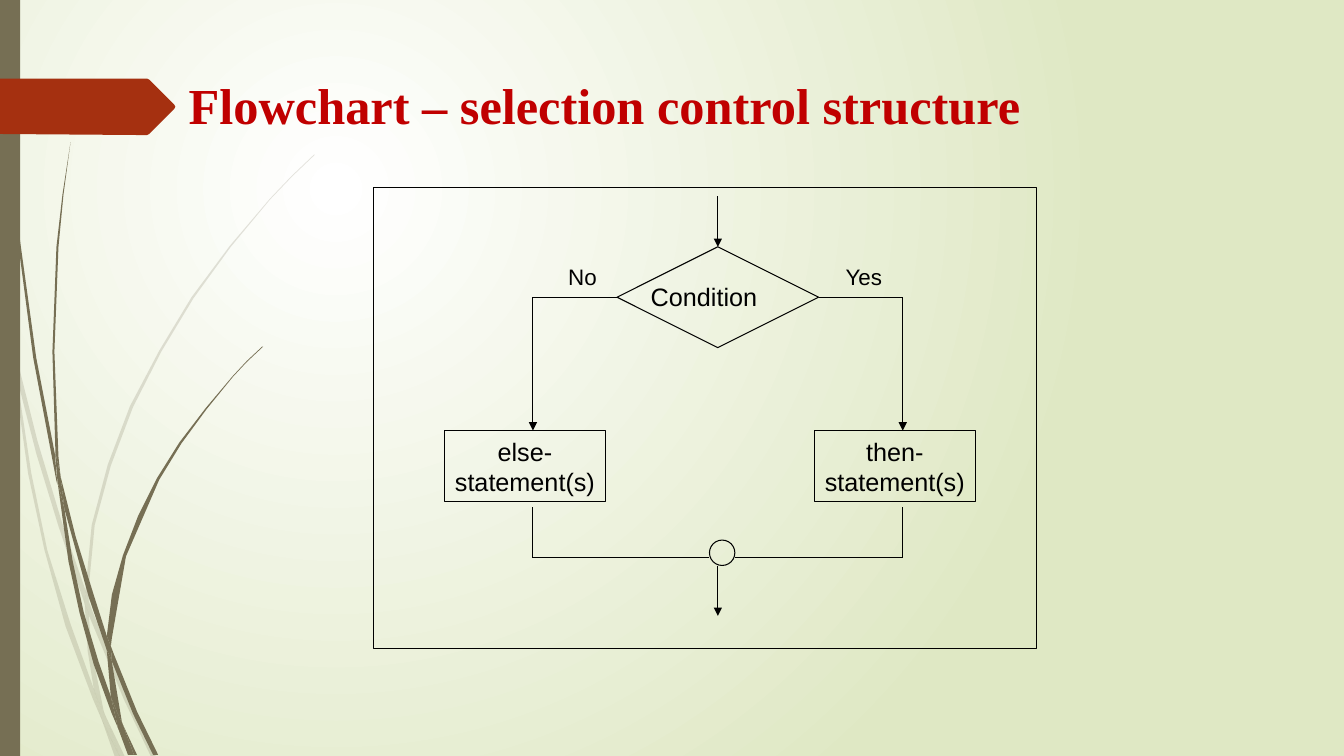
"""Build a slide with a flowchart of the selection control structure."""
from lxml.etree import SubElement
from pptx import Presentation
from pptx.dml.color import RGBColor
from pptx.enum.shapes import MSO_CONNECTOR, MSO_SHAPE
from pptx.enum.text import MSO_ANCHOR, MSO_AUTO_SIZE, PP_ALIGN
from pptx.oxml.ns import qn
from pptx.util import Cm, Pt

TITLE = "Flowchart – selection control structure"
BLACK, OLIVE, RUST, RED = "000000", "766F54", "A53010", "C00000"
BACKGROUND = [("FFFFFF", 0), ("DFE8C4", 100)]
HUNDREDTH = Cm(0.0254)

PALE_GRASS = [
    [(11, 350), (9, 322), (0, 282), (0, 299), (10, 344)],
    [(58, 522), (84, 599), (85, 586), (62, 520), (37, 437), (14, 345), (17, 376), (36, 450)],
    [(92, 607), (88, 596), (88, 610), (123, 694), (150, 751), (155, 751), (127, 692)],
    [(119, 751), (124, 751), (105, 711)],
    [(93, 683), (70, 619), (47, 546), (31, 469), (17, 376), (11, 350), (28, 470), (44, 545),
     (65, 621), (92, 693), (101, 714), (99, 707)],
    [(84, 599), (87, 646), (93, 683), (96, 692), (105, 711), (103, 706), (91, 646), (88, 610), (88, 608)],
    [(88, 584), (94, 521), (110, 462), (132, 404), (160, 349), (192, 296), (229, 245), (268, 198),
     (290, 175), (312, 154), (312, 153), (289, 175), (268, 197), (228, 244), (190, 295), (158, 348),
     (129, 403), (107, 461), (91, 521), (85, 584), (85, 586), (88, 596)],
    [(101, 714), (114, 751), (119, 751)],
    [(88, 608), (88, 610), (88, 596), (85, 586), (84, 599)],
    [(96, 692), (93, 683), (99, 707), (101, 714), (119, 751), (105, 711)],
]
DARK_GRASS = [
    [(7, 110), (17, 233), (33, 355), (56, 477), (57, 481), (55, 457), (55, 453), (36, 355), (19, 232),
     (8, 109), (5, 48), (4, 0), (3, 0), (4, 48)],
    [(88, 592), (106, 645), (106, 633), (106, 631), (93, 590), (75, 532), (60, 472), (64, 505)],
    [(113, 649), (110, 641), (111, 656), (132, 708), (152, 749), (157, 749), (136, 706)],
    [(110, 691), (98, 657), (83, 607), (72, 556), (64, 505), (57, 477), (68, 557), (79, 608), (93, 659),
     (111, 708), (117, 722), (116, 717)],
    [(60, 472), (58, 453), (54, 349), (58, 245), (63, 193), (70, 141), (62, 193), (56, 245), (52, 349),
     (55, 449), (60, 472)],
    [(133, 749), (136, 749), (122, 719)],
    [(57, 477), (64, 505), (60, 472), (55, 449), (55, 453)],
    [(111, 633), (125, 552), (158, 476), (180, 440), (205, 406), (231, 374), (245, 359), (261, 344),
     (260, 344), (245, 358), (231, 373), (204, 405), (178, 439), (156, 474), (137, 512), (122, 551),
     (111, 590), (106, 631), (110, 641)],
    [(117, 722), (127, 749), (131, 749)],
    [(106, 645), (110, 691), (116, 706), (122, 719), (121, 716), (111, 656), (109, 651)],
    [(106, 645), (109, 651), (111, 656), (110, 641), (106, 631), (106, 633)],
    [(116, 706), (110, 691), (116, 717), (117, 722), (130, 749), (133, 749), (122, 719)],
]
TITLE_ARROW = [(0, 78), (146, 78), (148, 79), (173, 104), (174, 106), (173, 108), (148, 133),
               (146, 134), (136, 134), (0, 133)]

CENTRE, BRANCH = 18.09, 4.66
NO_X, YES_X = CENTRE - BRANCH, CENTRE + BRANCH
DIAMOND_WIDTH, DIAMOND_HEIGHT, DIAMOND_TOP = 5.08, 2.54, 6.22
DIAMOND_LEFT = CENTRE - DIAMOND_WIDTH / 2
CONDITION_Y = DIAMOND_TOP + DIAMOND_HEIGHT / 2
BOX_WIDTH, BOX_HEIGHT, BOX_TOP, BOX_SHIFT = 4.06, 1.8, 10.85, 0.2
JOIN_Y, STUB = 14.05, 1.27
CIRCLE_LEFT, CIRCLE_TOP, CIRCLE_SIZE = 17.88, 13.61, 0.64
CIRCLE_BOTTOM = CIRCLE_TOP + CIRCLE_SIZE

OUTLINES = [
    (MSO_SHAPE.RECTANGLE, 9.42, 4.72, 16.71, 11.63),
    (MSO_SHAPE.FLOWCHART_DECISION, DIAMOND_LEFT, DIAMOND_TOP, DIAMOND_WIDTH, DIAMOND_HEIGHT),
    (MSO_SHAPE.FLOWCHART_CONNECTOR, CIRCLE_LEFT, CIRCLE_TOP, CIRCLE_SIZE, CIRCLE_SIZE),
]
STATEMENTS = [(NO_X, ["else-", "statement(s)"]), (YES_X, ["then-", "statement(s)"])]
LABELS = [
    ("Condition", 18, 16.15, 6.96, 3.2, 1.02),
    ("Yes", 16, 21.06, 6.5, 1.47, 0.94),
    ("No", 16, 14.07, 6.5, 1.22, 0.94),
]
LINES = [
    (CENTRE, DIAMOND_TOP - STUB, CENTRE, DIAMOND_TOP, True),
    (CENTRE, CIRCLE_BOTTOM, CENTRE, CIRCLE_BOTTOM + STUB, True),
    (NO_X, JOIN_Y, CIRCLE_LEFT, JOIN_Y, False),
    (CIRCLE_LEFT + CIRCLE_SIZE, JOIN_Y, YES_X, JOIN_Y, False),
]
for branch_x, corner_x in [(NO_X, DIAMOND_LEFT), (YES_X, DIAMOND_LEFT + DIAMOND_WIDTH)]:
    LINES += [
        (corner_x, CONDITION_Y, branch_x, CONDITION_Y, False),
        (branch_x, CONDITION_Y, branch_x, BOX_TOP, True),
        (branch_x, JOIN_Y - STUB, branch_x, JOIN_Y, False),
    ]


def colour(value):
    return RGBColor.from_string(value)


def apply(target, values):
    for name, value in values.items():
        setattr(target, name, value)


def write(shape, lines, frame_format, font_format, ink, alignment=PP_ALIGN.LEFT):
    frame = shape.text_frame
    apply(frame, frame_format)
    for index, line in enumerate(lines):
        para = frame.paragraphs[0] if index == 0 else frame.add_paragraph()
        para.alignment = alignment
        span = para.add_run()
        span.text = line
        apply(span.font, font_format)
        span.font.color.rgb = colour(ink)


def paint(shape, fill, opacity=100):
    shape.shadow.inherit = False
    shape.fill.solid()
    shape.fill.fore_color.rgb = colour(fill)
    shape.line.fill.background()
    if opacity < 100:
        tint = next(shape._element.iter(qn("a:srgbClr")))
        SubElement(tint, qn("a:alpha"), val=str(opacity * 1000))


def add_outline(shapes, points, fill, opacity=100):
    builder = shapes.build_freeform(*points[0], scale=HUNDREDTH)
    builder.add_line_segments(points[1:], close=True)
    paint(builder.convert_to_shape(), fill, opacity)


def add_box(shapes, kind, *place):
    box = shapes.add_shape(kind, *map(Cm, place))
    box.shadow.inherit = False
    box.fill.background()
    apply(box.line, {"width": Pt(0.75)})
    box.line.color.rgb = colour(BLACK)
    return box


def add_line(shapes, *ends, arrow):
    line = shapes.add_connector(MSO_CONNECTOR.STRAIGHT, *map(Cm, ends))
    line.line.width = Pt(0.75)
    line.line.color.rgb = colour(BLACK)
    if arrow:
        SubElement(line.line._get_or_add_ln(), qn("a:tailEnd"), type="triangle")
    SubElement(line._element.spPr, qn("a:effectLst"))


def set_background(page):
    fill = page.background.fill
    fill.gradient()
    for stop, (value, position) in zip(fill.gradient_stops, BACKGROUND):
        stop.color.rgb = colour(value)
        stop.position = position / 100
    gradient = next(page._element.iter(qn("a:gradFill")))
    gradient.remove(gradient.find(qn("a:lin")))
    circle = SubElement(gradient, qn("a:path"))
    circle.set("path", "circle")
    SubElement(circle, qn("a:fillToRect"), l="50000", t="50000", r="100000", b="100000")


def add_decoration(page):
    for blades, opacity in [(PALE_GRASS, 20), (DARK_GRASS, 100)]:
        group = page.shapes.add_group_shape()
        for blade in blades:
            add_outline(group.shapes, blade, OLIVE, opacity)
    paint(page.shapes.add_shape(MSO_SHAPE.RECTANGLE, 0, 0, Cm(0.51), Cm(19.05)), OLIVE)
    add_outline(page.shapes, TITLE_ARROW, RUST)


def add_flowchart(page):
    shapes = page.shapes.add_group_shape().shapes
    fitted = {"word_wrap": False, "auto_size": MSO_AUTO_SIZE.SHAPE_TO_FIT_TEXT}
    for outline in OUTLINES:
        add_box(shapes, *outline)
    for branch, lines in STATEMENTS:
        left = branch - BOX_SHIFT - BOX_WIDTH / 2
        box = add_box(shapes, MSO_SHAPE.RECTANGLE, left, BOX_TOP, BOX_WIDTH, BOX_HEIGHT)
        write(box, lines, fitted, {"name": "Arial", "size": Pt(18)}, BLACK, PP_ALIGN.CENTER)
    for *ends, arrow in LINES:
        add_line(shapes, *ends, arrow=arrow)
    for text, size, *place in LABELS:
        label = shapes.add_textbox(*map(Cm, place))
        write(label, [text], fitted, {"name": "Arial", "size": Pt(size)}, BLACK)


def main():
    deck = Presentation()
    apply(deck, {"slide_width": Cm(33.87), "slide_height": Cm(19.05)})
    page = deck.slides.add_slide(deck.slide_layouts[5])
    set_background(page)
    add_decoration(page)
    title = page.shapes.title
    apply(title, {"left": Cm(4.5), "top": Cm(1.73), "width": Cm(24.77), "height": Cm(3.56)})
    top = {"word_wrap": True, "auto_size": MSO_AUTO_SIZE.NONE, "vertical_anchor": MSO_ANCHOR.TOP}
    write(title, [TITLE], top, {"name": "Times New Roman", "size": Pt(36), "bold": True}, RED)
    add_flowchart(page)
    deck.save("out.pptx")


if __name__ == "__main__":
    main()
